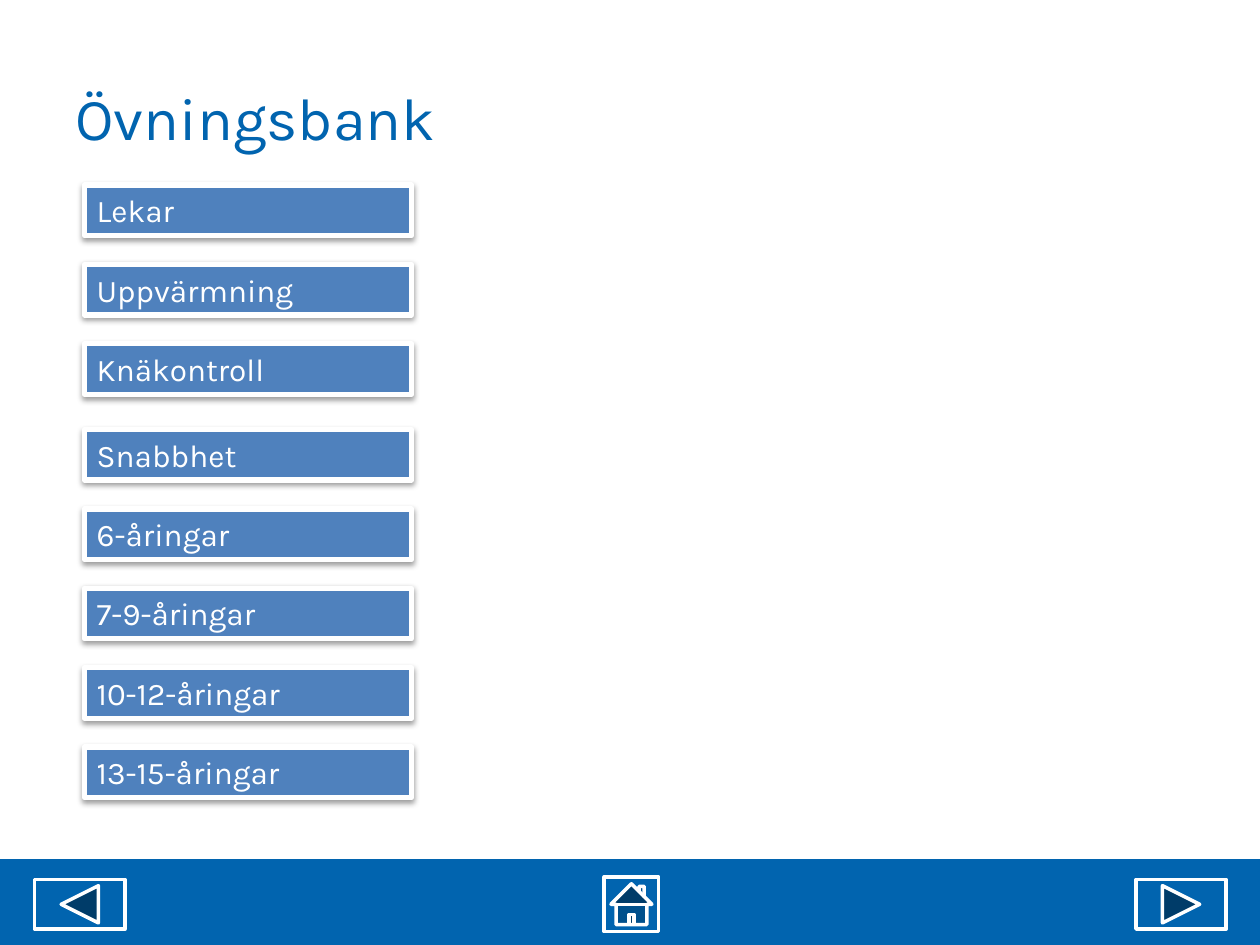
from lxml import etree
from pptx import Presentation
from pptx.dml.color import RGBColor
from pptx.enum import shapes, text
from pptx.oxml import ns
from pptx.util import Cm, Pt

HUES = {"blue": "0164AF", "box": "4F81BD", "white": "FFFFFF", "black": "000000"}
FONT = "Karla"
KIND = shapes.MSO_SHAPE


class Deck:
    """Holds the style and the current slide."""

    def __init__(self, wide, high):
        self.prs = Presentation()
        self.prs.slide_width, self.prs.slide_height = Cm(wide), Cm(high)
        self.slide = self.prs.slides.add_slide(self.prs.slide_layouts[5])

    def hue(self, name):
        return RGBColor.from_string(HUES[name])

    def words(self, frame, line, size, hue, anchor):
        frame.text = line
        frame.word_wrap = True
        frame.vertical_anchor = anchor
        para = frame.paragraphs[0]
        para.alignment = text.PP_ALIGN.LEFT
        para.font.name, para.font.size = FONT, Pt(size)
        para.font.color.rgb = self.hue(hue)

    def title(self, line, x, y, w, h):
        box = self.slide.shapes.title
        box.left, box.top, box.width, box.height = map(Cm, (x, y, w, h))
        self.words(box.text_frame, line, 34, "blue", text.MSO_ANCHOR.MIDDLE)

    def shape(self, kind, x, y, w, h, fill="blue", line=0):
        item = self.slide.shapes.add_shape(kind, *map(Cm, (x, y, w, h)))
        item.shadow.inherit = False
        item.fill.solid()
        item.fill.fore_color.rgb = self.hue(fill)
        if line:
            item.line.color.rgb = self.hue("white")
            item.line.width = Pt(line)
        else:
            item.line.fill.background()
        return item

    def shade(self, item):
        effects = item._element.spPr.find(ns.qn("a:effectLst"))
        outer = etree.SubElement(
            effects, ns.qn("a:outerShdw"), blurRad="40000", dist="20000",
            dir="5400000", rotWithShape="0")
        tint = etree.SubElement(outer, ns.qn("a:srgbClr"), val=HUES["black"])
        etree.SubElement(tint, ns.qn("a:alpha"), val="38000")

    def label(self, line, x, y, w, h):
        item = self.shape(KIND.RECTANGLE, x, y, w, h, "box", 3)
        self.shade(item)
        self.words(item.text_frame, line, 18, "white", text.MSO_ANCHOR.TOP)
        item.text_frame.auto_size = text.MSO_AUTO_SIZE.SHAPE_TO_FIT_TEXT

    def button(self, kind, x, y, w, h, flip=False):
        item = self.shape(kind, x, y, w, h, line=2)
        if flip:
            item._element.spPr.xfrm.set("flipH", "1")


def main():
    deck = Deck(25.4, 19.05)
    deck.title("Övningsbank", 1.27, 0.76, 19.43, 3.18)

    # Navigation bar
    deck.shape(KIND.RECTANGLE, 0, 17.32, 25.4, 1.73)
    deck.button(KIND.ACTION_BUTTON_HOME, 12.18, 17.68, 1.1, 1.1)
    for x, flip in ((22.9, False), (0.7, True)):
        deck.button(KIND.ACTION_BUTTON_FORWARD_OR_NEXT, x, 17.73, 1.82, 1, flip)

    # Exercise menu: two evenly spaced groups
    groups = (
        (3.73, ("Lekar", "Uppvärmning", "Knäkontroll")),
        (8.66, ("Snabbhet", "6-åringar", "7-9-åringar",
                "10-12-åringar", "13-15-åringar")),
    )
    for top, names in groups:
        for i, name in enumerate(names):
            deck.label(name, 1.7, top + 1.6 * i, 6.6, 1.02)

    deck.prs.save("out.pptx")


if __name__ == "__main__":
    main()
